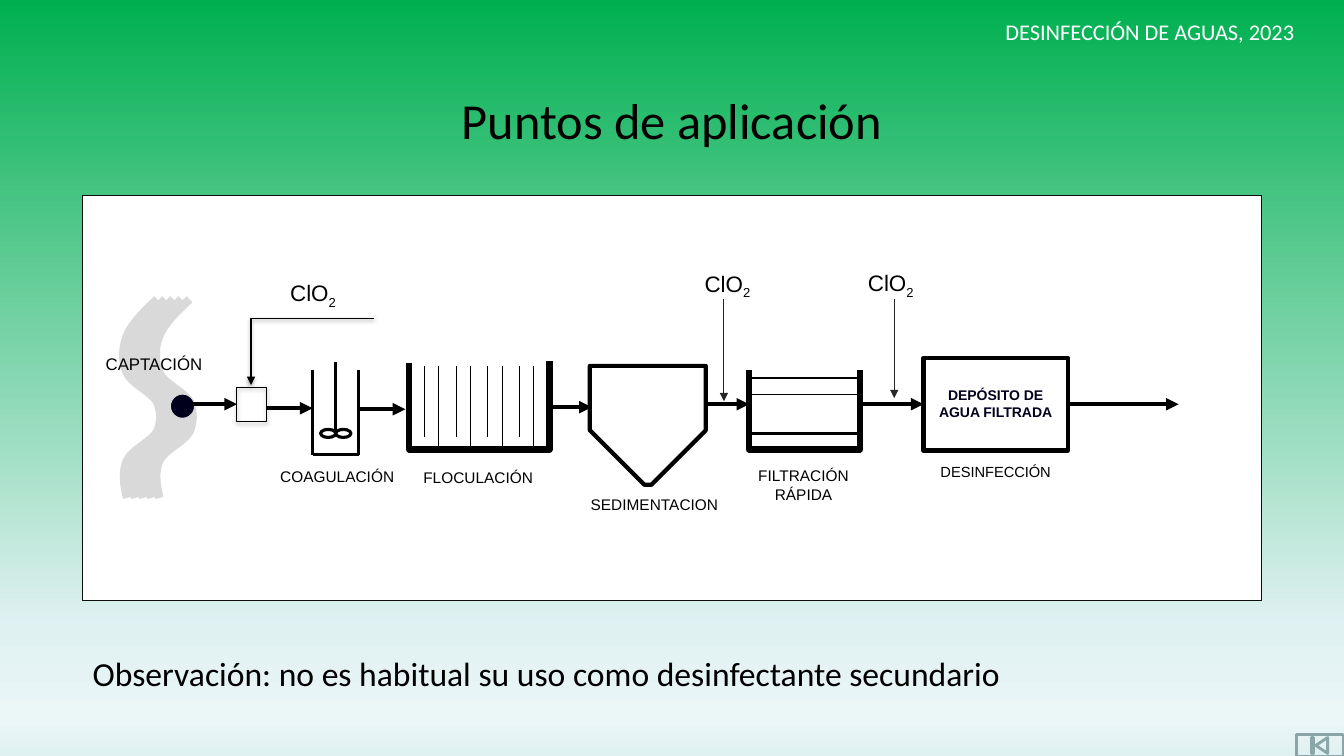
from copy import deepcopy
from dataclasses import dataclass
from typing import Optional

from lxml import etree
from pptx import Presentation
from pptx.dml.color import RGBColor
from pptx.enum import shapes as kinds, text as txt
from pptx.oxml.ns import qn
from pptx.util import Inches, Pt

BLACK = "000000"
SHAPE = kinds.MSO_SHAPE
LEFT, CENTER = txt.PP_ALIGN.LEFT, txt.PP_ALIGN.CENTER


@dataclass
class Block:
    left: float
    top: float
    width: float
    height: float
    weight: float = 0.75
    kind: SHAPE = SHAPE.RECTANGLE
    fill: Optional[str] = None
    line: str = BLACK
    shadow: bool = False


@dataclass
class Stroke:
    x1: float
    y1: float
    x2: float
    y2: float
    weight: float = 3
    color: str = BLACK
    arrow: bool = True
    source: Optional[str] = None
    target: Optional[str] = None


@dataclass
class Caption:
    words: str
    left: float
    top: float
    width: float
    height: float
    size: float = 11
    align: txt.PP_ALIGN = LEFT
    font: str = "Arial"
    color: str = BLACK
    bold: bool = False
    subscript: str = ""


def rgb(value: str) -> RGBColor:
    return RGBColor.from_string(value)


def add_soft_shadow(effects) -> None:
    shadow = etree.SubElement(effects, qn("a:outerShdw"), blurRad=str(Pt(3.1)),
                              dist=str(Pt(1.6)), dir="5400000", rotWithShape="0")
    color = etree.SubElement(shadow, qn("a:srgbClr"), val=BLACK)
    etree.SubElement(color, qn("a:alpha"), val="38000")


def style_shape(shape, weight: float, line: str, fill: Optional[str] = None) -> None:
    shape.shadow.inherit = False
    if fill:
        shape.fill.solid()
        shape.fill.fore_color.rgb = rgb(fill)
    else:
        shape.fill.background()
    shape.line.color.rgb = rgb(line)
    shape.line.width = Pt(weight)


def add_block(slide, block: Block):
    box = map(Inches, (block.left, block.top, block.width, block.height))
    shape = slide.shapes.add_shape(block.kind, *box)
    style_shape(shape, block.weight, block.line, block.fill)
    if block.shadow:
        add_soft_shadow(shape.element.spPr.find(qn("a:effectLst")))
    return shape


def add_outline(slide, points: list, weight: float, color: str = BLACK):
    start, *rest = [(Inches(x), Inches(y)) for x, y in points]
    builder = slide.shapes.build_freeform(*start)
    builder.add_line_segments(rest, close=False)
    shape = builder.convert_to_shape()
    style_shape(shape, weight, color)
    return shape


def bend(shape) -> None:
    """Turn each three line segments of an outline into one cubic curve."""
    segments = list(shape.element.iter(qn("a:lnTo")))
    for i in range(0, len(segments), 3):
        curve = etree.Element(qn("a:cubicBezTo"))
        segments[i].addprevious(curve)
        for segment in segments[i:i + 3]:
            curve.append(segment[0])
            segment.getparent().remove(segment)


def add_stroke(slide, stroke: Stroke, blocks: dict,
               kind=kinds.MSO_CONNECTOR.STRAIGHT):
    ends = map(Inches, (stroke.x1, stroke.y1, stroke.x2, stroke.y2))
    connector = slide.shapes.add_connector(kind, *ends)
    if stroke.source:
        connector.begin_connect(blocks[stroke.source], 3)
    if stroke.target:
        connector.end_connect(blocks[stroke.target], 1)
    connector.line.color.rgb = rgb(stroke.color)
    connector.line.width = Pt(stroke.weight)
    properties = connector.element.spPr
    if stroke.arrow:
        etree.SubElement(properties.find(qn("a:ln")), qn("a:tailEnd"), type="triangle")
    etree.SubElement(properties, qn("a:effectLst"))
    return connector


def write(frame, words: str, *, size: float, align=LEFT, font="Arial",
          color=BLACK, bold=False, subscript="") -> None:
    frame.word_wrap = True
    paragraph = frame.paragraphs[0]
    paragraph.alignment = align
    for part in filter(None, (words, subscript)):
        run = paragraph.add_run()
        run.text = part
        run.font.size, run.font.name, run.font.bold = Pt(size), font, bold
        run.font.color.rgb = rgb(color)
    if subscript:
        run.font._element.set("baseline", "-25000")


def add_caption(slide, c: Caption) -> None:
    box = slide.shapes.add_textbox(*map(Inches, (c.left, c.top, c.width, c.height)))
    write(box.text_frame, c.words, size=c.size, align=c.align, font=c.font,
          color=c.color, bold=c.bold, subscript=c.subscript)


def paint_background(slide) -> None:
    stops = [(0, "00B050"), (0.83, "E0F1F2"), (0.95, "EBF6F7"), (1, "E0F1F2")]
    fill = slide.background.fill
    fill.gradient()
    fill.gradient_angle = 270
    stop_list = slide.element.find(".//" + qn("a:gsLst"))
    while len(stop_list) < len(stops):
        stop_list.append(deepcopy(stop_list[0]))
    for stop, (position, color) in zip(fill.gradient_stops, stops):
        stop.position = position
        stop.color.rgb = rgb(color)


RIVER = [(.35, 2.97), (.22, 3.09), (.1, 3.21), (.05, 3.33), (0, 3.46),
         (0, 3.59), (.05, 3.7), (.1, 3.81), (.3, 3.89), (.35, 3.99),
         (.39, 4.09), (.39, 4.19), (.35, 4.28), (.3, 4.38), (.1, 4.46),
         (.05, 4.57), (0, 4.68), (.02, 4.81), (.05, 4.94)]
BLOCKS = {
    "intake": Block(1.69, 3.91, .24, .24, kind=SHAPE.OVAL, fill="00001C", line="D9D9D9"),
    "dosing": Block(2.35, 3.84, .29, .34, shadow=True),
    "left blade": Block(3.18, 4.26, .15, .08, 2.25, SHAPE.OVAL),
    "right blade": Block(3.33, 4.26, .15, .08, 2.25, SHAPE.OVAL),
    "settler": Block(5.85, 3.63, 1.15, 1.18, 3, SHAPE.SNIP_2_SAME_RECTANGLE),
    "filter water": Block(7.43, 3.75, 1.1, .55, 1),
    "filter drain": Block(7.43, 4.3, 1.1, .16, 2.25),
    "filter bed": Block(7.43, 3.91, 1.1, .39),
    "tank": Block(9.16, 3.55, 1.43, .92, 3),
    "start button": Block(12.86, 7.29, .46, .21, 2, SHAPE.ACTION_BUTTON_BEGINNING,
                          line="8AA6A8"),
}
BASINS = [
    [(4.06, 3.6), (4.06, 4.46), (5.45, 4.46), (5.45, 3.58)],
    [(7.43, 3.67), (7.43, 4.46), (8.53, 4.46), (8.53, 3.67)],
]
MIXER = [Stroke(*ends, weight=2.25, arrow=False) for ends in (
    (3.1, 4.51, 3.56, 4.51), (3.1, 3.67, 3.1, 4.51),
    (3.56, 3.67, 3.56, 4.51), (3.33, 4.34, 3.33, 3.59))]
BAFFLES = [Stroke(x + .315 * i, 3.63, x + .315 * i, bottom, .75, arrow=False)
           for i in range(4) for x, bottom in ((4.21, 4.34), (4.35, 4.46))]
FLOWS = [
    Stroke(1.89, 4.01, 2.35, 4.01, target="dosing"),
    Stroke(2.65, 4.05, 3.1, 4.05),
    Stroke(3.57, 4.06, 4.02, 4.06),
    Stroke(5.46, 4.04, 5.87, 4.04),
    Stroke(7.01, 4.01, 7.43, 4.01),
    Stroke(8.53, 4.01, 9.16, 4.01, target="tank"),
    Stroke(10.58, 4.01, 11.69, 4.01, source="tank"),
]
DOSES = [Stroke(7.18, 2.97, 7.18, 3.98, .75, "262626"),
         Stroke(8.87, 2.97, 8.87, 3.95, .75, "262626")]
CAPTIONS = [
    Caption("DESINFECCIÓN DE AGUAS, 2023", 9.82, .13, 3.17, .37, 16, CENTER,
            "Calibri", "FFFFFF"),
    Caption("CAPTACIÓN", .95, 3.46, 1.26, .3, 12),
    Caption("COAGULACIÓN", 2.68, 4.58, 1.42, .29),
    Caption("FLOCULACIÓN", 4.1, 4.59, 1.47, .29),
    Caption("SEDIMENTACION", 5.76, 4.86, 1.66, .29),
    Caption("FILTRACIÓN RÁPIDA", 7.26, 4.58, 1.42, .47, align=CENTER),
    Caption("DESINFECCIÓN", 9.23, 4.54, 1.34, .28, 10.5),
    Caption("DEPÓSITO DE AGUA FILTRADA", 9.16, 3.79, 1.43, .44, 10, CENTER,
            color="00001C", bold=True),
    *(Caption("ClO", left, top, width, .37, 16, subscript="2")
      for left, top, width in ((2.78, 2.72, .96), (6.89, 2.63, .96), (8.51, 2.62, 1.09))),
    Caption("Observación: no es habitual su uso como desinfectante secundario",
            .82, 6.43, 11.69, .5, 24, font="Calibri"),
]


def main() -> None:
    deck = Presentation()
    deck.slide_width, deck.slide_height = Inches(13.33), Inches(7.5)
    slide = deck.slides.add_slide(deck.slide_layouts[5])
    paint_background(slide)

    title = slide.shapes.title
    title.left, title.top, title.width, title.height = map(Inches, (0, .83, 13.33, .71))
    title.text_frame.auto_size = txt.MSO_AUTO_SIZE.NONE
    write(title.text_frame, "Puntos de aplicación", size=36, align=CENTER, font="Calibri")

    add_block(slide, Block(.82, 1.94, 11.69, 4.02, fill="FFFFFF", line="0D0D0D"))
    for strand in range(5):
        bend(add_outline(slide, [(1.21 + .08 * strand + x, y) for x, y in RIVER], 6, "D9D9D9"))

    blocks = {name: add_block(slide, block) for name, block in BLOCKS.items()}
    blocks["settler"].rotation = 180
    blocks["settler"].adjustments[0] = .471
    for basin in BASINS:
        add_outline(slide, basin, 4.5)
    for stroke in MIXER + BAFFLES + FLOWS + DOSES:
        add_stroke(slide, stroke, blocks)

    first_dose = add_stroke(slide, Stroke(3.71, 3.16, 2.49, 3.82, 1), blocks,
                            kinds.MSO_CONNECTOR.ELBOW).element.spPr
    first_dose.find(qn("a:prstGeom")).set("prst", "bentConnector2")
    add_soft_shadow(first_dose.find(qn("a:effectLst")))

    for caption in CAPTIONS:
        add_caption(slide, caption)
    deck.save("out.pptx")


if __name__ == "__main__":
    main()
